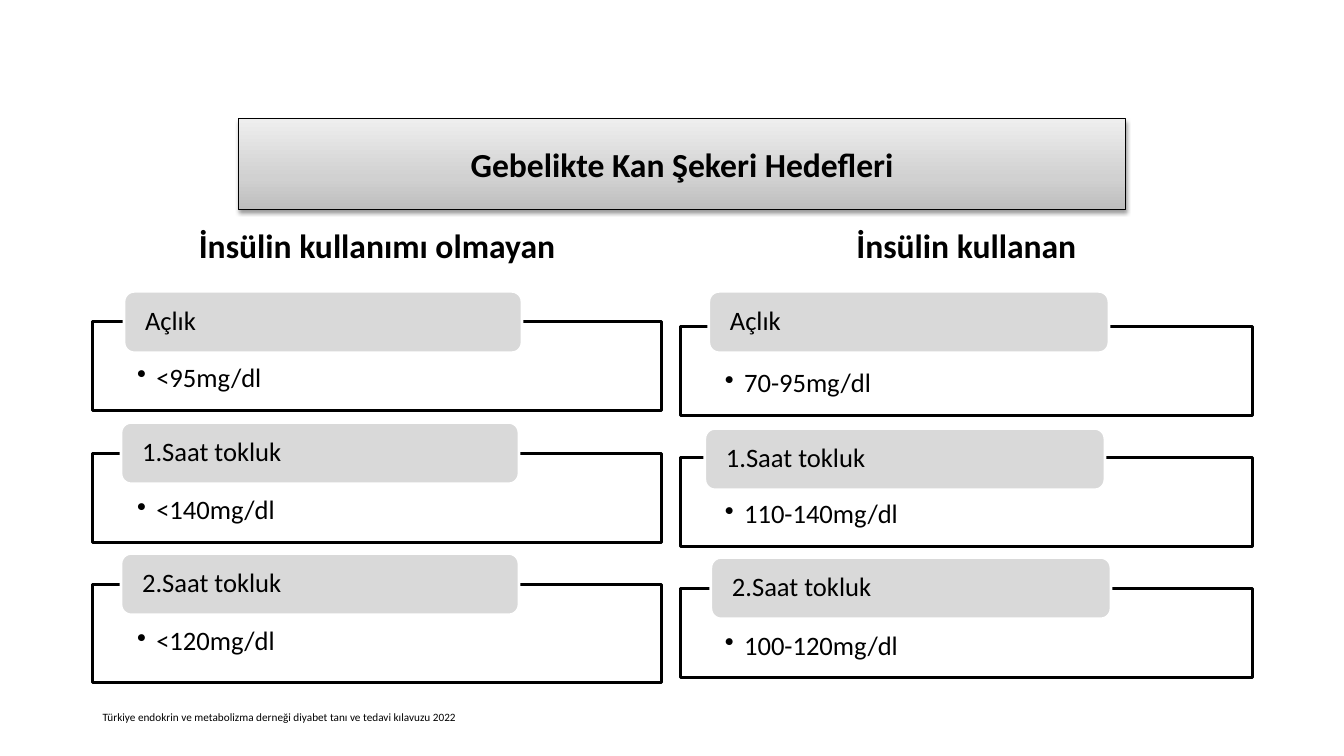
from lxml.etree import SubElement
from pptx import Presentation
from pptx.dml.color import RGBColor
from pptx.enum.shapes import MSO_SHAPE
from pptx.enum.text import MSO_ANCHOR, PP_ALIGN
from pptx.oxml import parse_xml
from pptx.oxml.ns import nsdecls, qn
from pptx.util import Inches, Pt

BLACK = RGBColor(0x00, 0x00, 0x00)
WHITE = RGBColor(0xFF, 0xFF, 0xFF)
TAB_GREY = RGBColor(0xD9, 0xD9, 0xD9)
BANNER_STOPS = [
    (0, RGBColor(0xBD, 0xBD, 0xBD)),
    (35, RGBColor(0xD1, 0xD1, 0xD1)),
    (100, RGBColor(0xEE, 0xEE, 0xEE)),
]
FONT = "Calibri"
TAB_HEIGHT = 0.61

WITHOUT_INSULIN = [
    ("Açlık", "<95mg/dl", (0.31, 2.89), (3.19, 0.88)),
    ("1.Saat tokluk", "<140mg/dl", (0.28, 4.19), (4.5, 0.88)),
    ("2.Saat tokluk", "<120mg/dl", (0.28, 5.49), (5.8, 0.97)),
]
WITH_INSULIN = [
    ("Açlık", "70-95mg/dl", (0.28, 2.89), (3.24, 0.88)),
    ("1.Saat tokluk", "110-140mg/dl", (0.24, 4.25), (4.54, 0.88)),
    ("2.Saat tokluk", "100-120mg/dl", (0.3, 5.53), (5.84, 0.88)),
]


def write(shape, text, size, bold=False, align=PP_ALIGN.LEFT,
          anchor=MSO_ANCHOR.MIDDLE, insets=(0.1, 0.05, 0.1, 0.05)):
    """Put one formatted paragraph into a shape and return the paragraph."""
    frame = shape.text_frame
    frame.word_wrap = True
    frame.vertical_anchor = anchor
    (frame.margin_left, frame.margin_top,
     frame.margin_right, frame.margin_bottom) = map(Inches, insets)
    frame.text = text
    paragraph = frame.paragraphs[0]
    paragraph.alignment = align
    font = paragraph.runs[0].font
    font.name, font.size, font.bold = FONT, Pt(size), bold
    font.color.rgb = BLACK
    return paragraph


def add_box(slide, preset, box, fill, line, width):
    """Add a filled and outlined shape without a shadow."""
    shape = slide.shapes.add_shape(preset, *map(Inches, box))
    shape.shadow.inherit = False
    shape.fill.solid()
    shape.fill.fore_color.rgb = fill
    shape.line.color.rgb = line
    shape.line.width = Pt(width)
    return shape


def add_label(slide, box, text, size, bold=False, align=PP_ALIGN.LEFT):
    """Add a text box whose text sits on its lower edge."""
    label = slide.shapes.add_textbox(*map(Inches, box))
    return write(label, text, size, bold, align, MSO_ANCHOR.BOTTOM)


def add_banner(slide, box, text):
    """Add the title banner with its gradient and soft shadow."""
    banner = add_box(slide, MSO_SHAPE.RECTANGLE, box, WHITE, BLACK, 0.75)
    properties = banner._element.spPr
    stops = "".join(
        f'<a:gs pos="{position * 1000}"><a:srgbClr val="{color}"/></a:gs>'
        for position, color in BANNER_STOPS)
    gradient = parse_xml(
        f'<a:gradFill {nsdecls("a")} rotWithShape="1"><a:gsLst>{stops}</a:gsLst>'
        '<a:lin ang="16200000" scaled="1"/></a:gradFill>')
    properties.replace(properties.find(qn("a:solidFill")), gradient)
    properties.find(qn("a:effectLst")).append(parse_xml(
        f'<a:outerShdw {nsdecls("a")} blurRad="{Pt(3.1)}" dist="{Pt(1.6)}" '
        'dir="5400000" rotWithShape="0"><a:srgbClr val="000000">'
        '<a:alpha val="38000"/></a:srgbClr></a:outerShdw>'))
    write(banner, text, 24, True, PP_ALIGN.CENTER)


def add_target(slide, frame_box, tab_box, moment, value):
    """Add a framed target value with its name on a tab over the top edge."""
    frame = add_box(slide, MSO_SHAPE.RECTANGLE, frame_box, WHITE, BLACK, 2)
    color = frame._element.spPr.find(qn("a:solidFill"))[0]
    SubElement(color, qn("a:alpha")).set("val", "90000")
    bullet = write(frame, value, 19, anchor=MSO_ANCHOR.TOP,
                   insets=(0.44, 0.43, 0.44, 0.15))
    bullet.line_spacing = 0.9
    properties = bullet._p.get_or_add_pPr()
    properties.set("marL", str(Inches(0.19)))
    properties.set("indent", str(Inches(-0.19)))
    SubElement(properties, qn("a:buChar")).set("char", "•")

    tab = add_box(slide, MSO_SHAPE.ROUNDED_RECTANGLE, tab_box, TAB_GREY, WHITE, 2)
    write(tab, moment, 19, insets=(0.18, 0, 0.18, 0)).line_spacing = 0.9


def add_column(slide, left, width, heading, targets):
    """Add a heading and the targets below it."""
    add_label(slide, (left, 2.07, width, 0.61), heading, 24, True, PP_ALIGN.CENTER)
    for moment, value, (tab_offset, tab_top), (top, height) in targets:
        add_target(slide, (left, top, width, height),
                   (left + tab_offset, tab_top, width * 0.7, TAB_HEIGHT),
                   moment, value)


def main():
    """Build the slide and save it."""
    presentation = Presentation()
    presentation.slide_width = Inches(13.33)
    presentation.slide_height = Inches(7.5)
    slide = presentation.slides.add_slide(presentation.slide_layouts[6])
    add_banner(slide, (2.37, 1.18, 8.79, 0.9), "Gebelikte Kan Şekeri Hedefleri")
    add_column(slide, 0.92, 5.64, "İnsülin kullanımı olmayan", WITHOUT_INSULIN)
    add_column(slide, 6.75, 5.67, "İnsülin kullanan", WITH_INSULIN)
    add_label(slide, (0.92, 6.97, 4.51, 0.26),
              "Türkiye endokrin ve metabolizma derneği diyabet tanı ve tedavi kılavuzu 2022",
              8).line_spacing = 0.9
    presentation.save("out.pptx")


if __name__ == "__main__":
    main()
